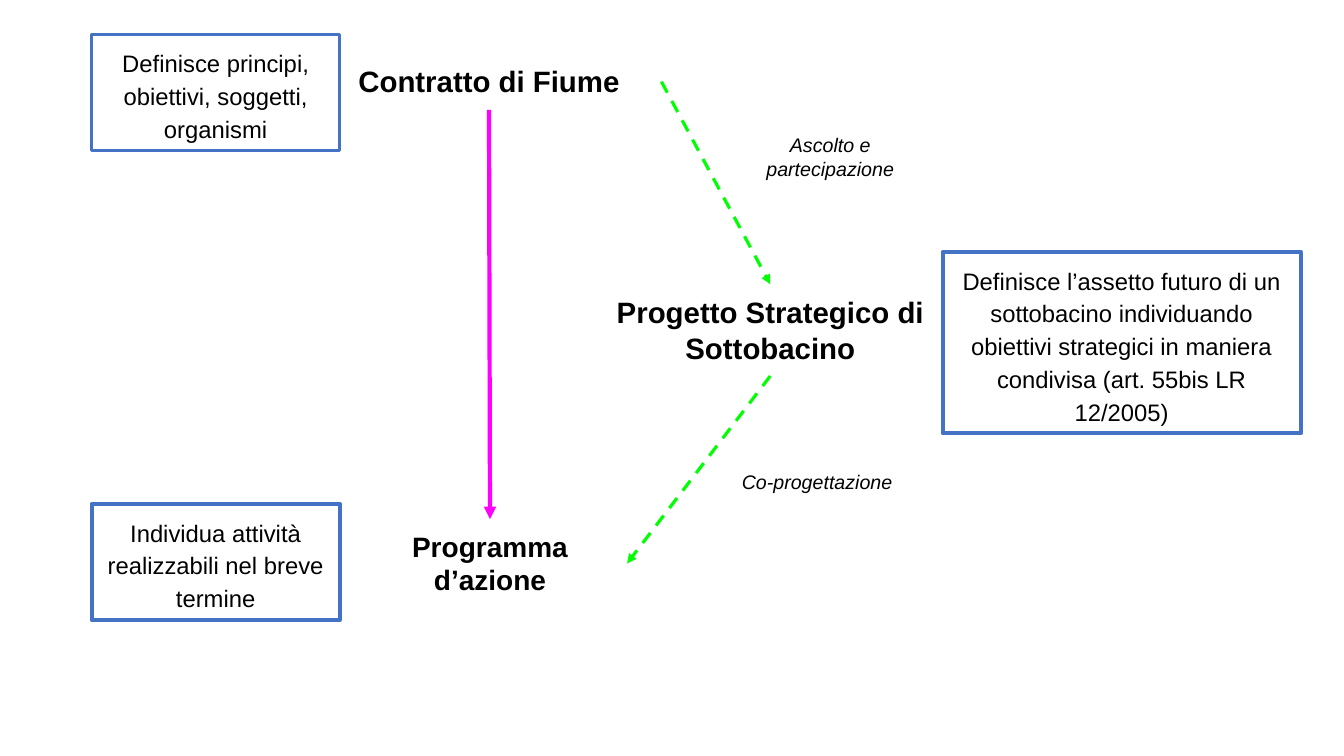
from lxml import etree
from pptx import Presentation
from pptx import util as u
from pptx.dml.color import RGBColor
from pptx.enum import dml, shapes, text
from pptx.oxml import ns

PX = 9144  # EMU per px, at 100 px to the inch
TOP, BOTTOM, RIGHT = 0, 2, 3  # connection sites
BLACK, WHITE, BLUE = "000000", "FFFFFF", "4472C4"
MAGENTA, GREEN = "FF00FF", "00FF00"


def px(*lengths):
    return [u.Emu(length * PX) for length in lengths]


def color(hex_code):
    return RGBColor.from_string(hex_code)


def write(holder, wording, size, bold=None, italic=None, spacing=None):
    frame = holder.text_frame
    frame.word_wrap = True
    frame.auto_size = text.MSO_AUTO_SIZE.SHAPE_TO_FIT_TEXT
    frame.vertical_anchor = text.MSO_ANCHOR.TOP
    frame.margin_left = frame.margin_right = px(10)[0]
    frame.margin_top = frame.margin_bottom = px(10)[0]
    paragraph = frame.paragraphs[0]
    paragraph.alignment = text.PP_ALIGN.CENTER
    paragraph.line_spacing = spacing
    run = paragraph.add_run()
    run.text = wording
    run.font.name = "Arial"
    run.font.size = u.Pt(size)
    run.font.bold = bold
    run.font.italic = italic
    run.font.color.rgb = color(BLACK)


def add_description(slide, wording, box, border=3, fill=WHITE):
    description = slide.shapes.add_shape(shapes.MSO_SHAPE.RECTANGLE, *px(*box))
    description.shadow.inherit = False
    if fill:
        description.fill.solid()
        description.fill.fore_color.rgb = color(fill)
    else:
        description.fill.background()
    description.line.color.rgb = color(BLUE)
    description.line.width = u.Pt(border)
    write(description, wording, 17, spacing=1.15)


def add_label(slide, wording, box, size, **style):
    label = slide.shapes.add_textbox(*px(*box))
    write(label, wording, size, **style)
    return label


def add_arrow(slide, start, start_site, end, end_site, hex_code, width, dashed=False):
    arrow = slide.shapes.add_connector(shapes.MSO_CONNECTOR.STRAIGHT, 0, 0, 0, 0)
    arrow.begin_connect(start, start_site)
    arrow.end_connect(end, end_site)
    arrow.line.color.rgb = color(hex_code)
    arrow.line.width = u.Pt(width)
    if dashed:
        arrow.line.dash_style = dml.MSO_LINE.DASH
    properties = arrow.element.spPr
    head = etree.SubElement(properties.find(ns.qn("a:ln")), ns.qn("a:tailEnd"))
    head.set("type", "triangle")
    etree.SubElement(properties, ns.qn("a:effectLst"))


def main():
    deck = Presentation()
    deck.slide_width, deck.slide_height = px(1333, 750)
    slide = deck.slides.add_slide(deck.slide_layouts[6])

    # Framed descriptions
    add_description(slide, "Individua attività realizzabili nel breve termine",
                    (91, 500, 246, 115))
    add_description(slide, "Definisce principi, obiettivi, soggetti, organismi",
                    (91, 34, 246, 115), border=2.25, fill=None)
    add_description(slide, "Definisce l’assetto futuro di un sottobacino individuando "
                    "obiettivi strategici in maniera condivisa (art. 55bis LR 12/2005)",
                    (935, 250, 355, 180))

    # Stages of the process
    contract = add_label(slide, "Contratto di Fiume", (314, 53, 342, 56), 21, bold=True)
    programme = add_label(slide, "Programma d’azione", (350, 515, 272, 88), 20, bold=True)
    project = add_label(slide, "Progetto Strategico di Sottobacino",
                        (593, 282, 342, 91), 21, bold=True)

    # Direct route, then the route through the strategic project
    add_arrow(slide, contract, BOTTOM, programme, TOP, MAGENTA, 3)
    add_arrow(slide, contract, RIGHT, project, TOP, GREEN, 2.25, dashed=True)
    add_arrow(slide, project, BOTTOM, programme, RIGHT, GREEN, 2.25, dashed=True)

    # Notes beside the dashed arrows
    add_label(slide, "Ascolto e partecipazione", (738, 122, 171, 67), 14, italic=True)
    add_label(slide, "Co-progettazione", (725, 456, 171, 44), 14, italic=True)

    deck.save("out.pptx")


if __name__ == "__main__":
    main()
